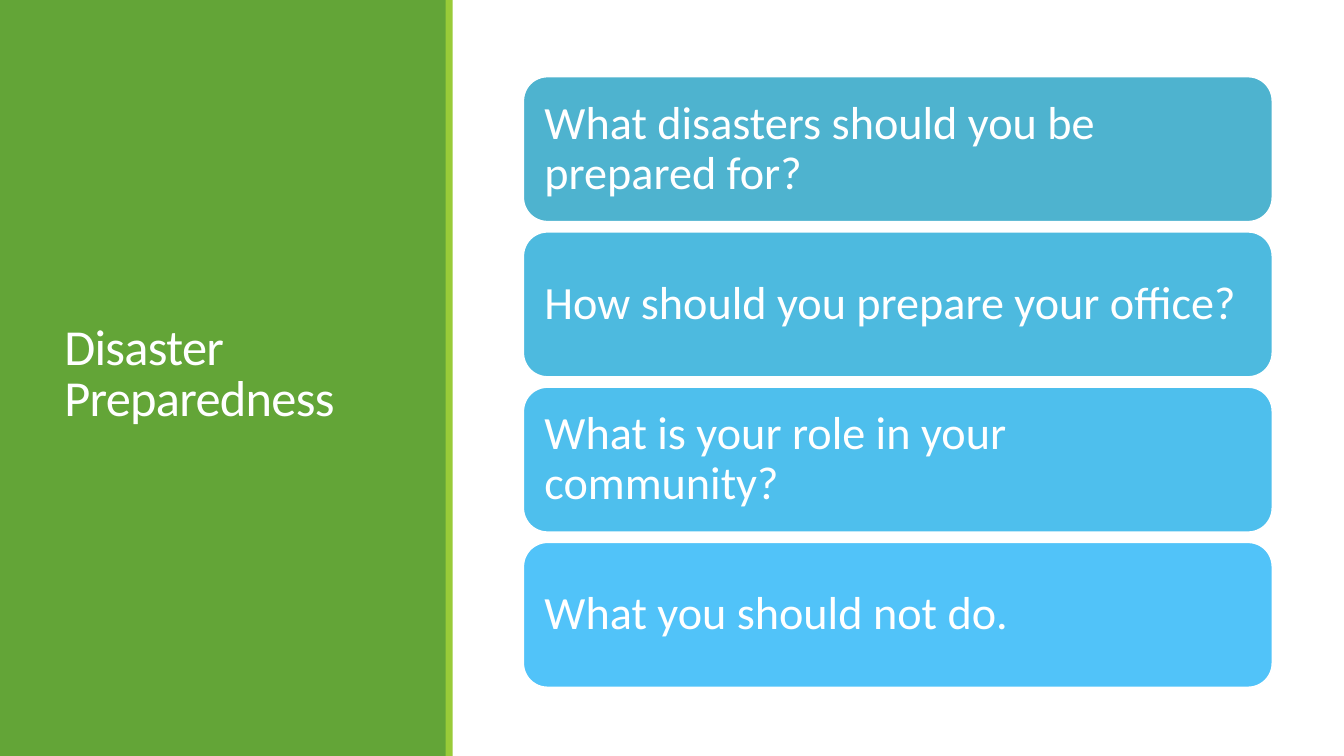
from pptx import Presentation
from pptx.dml.color import RGBColor
from pptx.enum import shapes, text
from pptx.util import Inches, Pt

WHITE, GREEN, LIME = "FFFFFF", "63A537", "99CB38"


def rgb(color):
    return RGBColor.from_string(color)


def add_box(kind, left, top, width, height, fill):
    """Add a filled shape without shadow or outline."""
    sp = s.shapes.add_shape(kind, Inches(left), Inches(top), Inches(width), Inches(height))
    sp.shadow.inherit = False
    sp.fill.solid()
    sp.fill.fore_color.rgb = rgb(fill)
    sp.line.fill.background()
    return sp


prs = Presentation()
prs.slide_width, prs.slide_height = Inches(13.33), Inches(7.5)
s = prs.slides.add_slide(prs.slide_layouts[6])

# Title panel with its edge strip
add_box(shapes.MSO_SHAPE.RECTANGLE, 0, 0, 4.43, 7.5, GREEN)
add_box(shapes.MSO_SHAPE.RECTANGLE, 4.42, 0, 0.07, 7.5, LIME)

title = s.shapes.add_textbox(Inches(0.54), Inches(0.57), Inches(3.37), Inches(6.31))
tf = title.text_frame
tf.word_wrap = True
tf.vertical_anchor = text.MSO_ANCHOR.MIDDLE
p = tf.paragraphs[0]
p.line_spacing = 0.85
r = p.add_run()
r.text = "Disaster Preparedness"
p.font.name, p.font.size, p.font.color.rgb = "Calibri", Pt(36), rgb(WHITE)
r.font._element.set("spc", "-50")

# Question cards
cards = [
    ("What disasters should you be prepared for?", "4EB3CF"),
    ("How should you prepare your office?", "4DBADF"),
    ("What is your role in your community?", "4EBFED"),
    ("What you should not do.", "51C3F9"),
]
for i, (question, fill) in enumerate(cards):
    card = add_box(shapes.MSO_SHAPE.ROUNDED_RECTANGLE, 5.19, 0.76 + 1.54 * i, 7.43, 1.44, fill)
    card.line.color.rgb = rgb(WHITE)
    card.line.width = Pt(1.25)
    tf = card.text_frame
    tf.word_wrap = True
    tf.vertical_anchor = text.MSO_ANCHOR.MIDDLE
    tf.margin_left = tf.margin_top = tf.margin_bottom = Inches(0.14)
    tf.margin_right = Inches(0.2)
    p = tf.paragraphs[0]
    p.text = question
    p.alignment = text.PP_ALIGN.LEFT
    p.line_spacing = 0.9
    p.font.name, p.font.size, p.font.color.rgb = "Calibri", Pt(33), rgb(WHITE)

prs.save("out.pptx")
